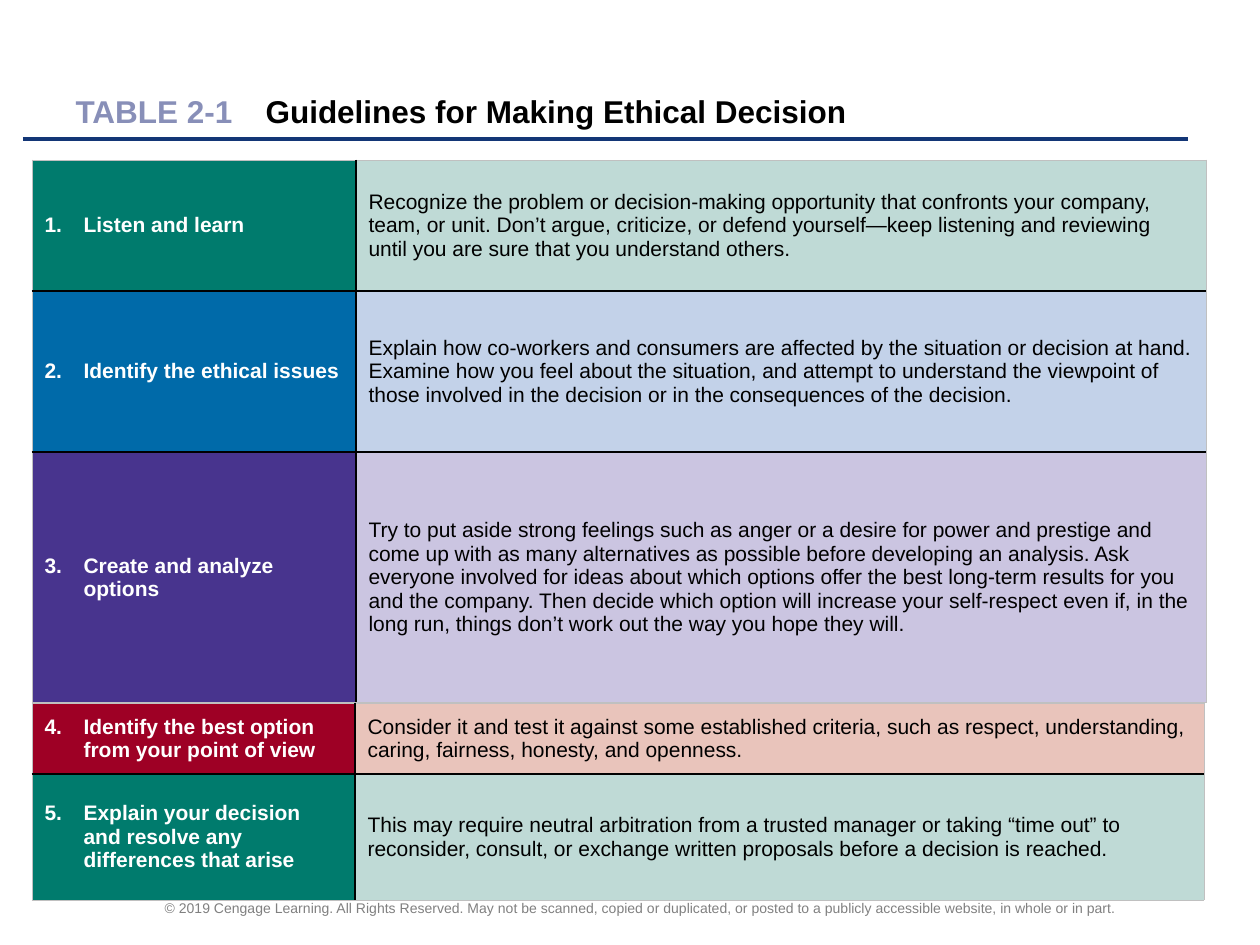
from pptx import Presentation
from pptx.dml.color import RGBColor
from pptx.enum.shapes import MSO_CONNECTOR
from pptx.enum.text import MSO_ANCHOR, PP_ALIGN
from pptx.oxml.ns import qn
from pptx.util import Emu, Pt
from lxml.etree import SubElement

EMU_PER_PX = 914400 / 126

BLACK = RGBColor(0x00, 0x00, 0x00)
WHITE = RGBColor(0xFF, 0xFF, 0xFF)
GRAY = RGBColor(0x80, 0x80, 0x80)
EDGE_GRAY = RGBColor(0xC0, 0xC0, 0xC0)
NAVY = RGBColor(0x13, 0x36, 0x76)
LAVENDER = RGBColor(0x88, 0x8F, 0xB8)
GREEN, PALE_GREEN = RGBColor(0x00, 0x7B, 0x6D), RGBColor(0xBF, 0xDA, 0xD6)
BLUE, PALE_BLUE = RGBColor(0x00, 0x6A, 0xA9), RGBColor(0xC3, 0xD2, 0xE9)
PURPLE, PALE_PURPLE = RGBColor(0x48, 0x34, 0x8E), RGBColor(0xCB, 0xC5, 0xE1)
RED, PALE_RED = RGBColor(0x9E, 0x00, 0x25), RGBColor(0xE9, 0xC4, 0xBB)

# Each row: height, step, step fill, explanation, explanation fill
FIRST_STEPS = [
    (131, "Listen and learn", GREEN,
     "Recognize the problem or decision-making opportunity that confronts your "
     "company, team, or unit. Don’t argue, criticize, or defend yourself—keep "
     "listening and reviewing until you are sure that you understand others.",
     PALE_GREEN),
    (161, "Identify the ethical issues", BLUE,
     "Explain how co-workers and consumers are affected by the situation or "
     "decision at hand. Examine how you feel about the situation, and attempt to "
     "understand the viewpoint of those involved in the decision or in the "
     "consequences of the decision.",
     PALE_BLUE),
    (251, "Create and analyze options", PURPLE,
     "Try to put aside strong feelings such as anger or a desire for power and "
     "prestige and come up with as many alternatives as possible before developing "
     "an analysis. Ask everyone involved for ideas about which options offer the "
     "best long-term results for you and the company. Then decide which option "
     "will increase your self-respect even if, in the long run, things don’t work "
     "out the way you hope they will.",
     PALE_PURPLE),
]
LAST_STEPS = [
    (71, "Identify the best option from your point of view", RED,
     "Consider it and test it against some established criteria, such as respect, "
     "understanding, caring, fairness, honesty, and openness.",
     PALE_RED),
    (126, "Explain your decision and resolve any differences that arise", GREEN,
     "This may require neutral arbitration from a trusted manager or taking “time "
     "out” to reconsider, consult, or exchange written proposals before a decision "
     "is reached.",
     PALE_GREEN),
]


def px(length):
    return Emu(round(length * EMU_PER_PX))


class SlideBuilder:
    font_name = "Arial"

    def __init__(self, slide):
        self.slide = slide

    def add_text(self, paragraph, text, color, size, bold=False):
        run = paragraph.add_run()
        run.text = text
        values = {"name": self.font_name, "size": Pt(size), "bold": bold}
        for name, value in values.items():
            setattr(run.font, name, value)
        run.font.color.rgb = color

    def title(self, left, top, width, height, parts, tab):
        shape = self.slide.shapes.title
        box = {"left": left, "top": top, "width": width, "height": height}
        for name, value in box.items():
            setattr(shape, name, px(value))
        frame = shape.text_frame
        frame.word_wrap = True
        frame.vertical_anchor = MSO_ANCHOR.MIDDLE
        paragraph = frame.paragraphs[0]
        paragraph.alignment = PP_ALIGN.LEFT
        tabs = SubElement(paragraph._p.get_or_add_pPr(), qn("a:tabLst"))
        SubElement(tabs, qn("a:tab"), pos=str(px(tab)), algn="l")
        for text, color in parts:
            self.add_text(paragraph, text, color, 18, bold=True)

    def footer(self, left, top, width, height, text):
        shape = self.slide.shapes.add_textbox(*map(px, (left, top, width, height)))
        frame = shape.text_frame
        frame.word_wrap = True
        frame.vertical_anchor = MSO_ANCHOR.MIDDLE
        paragraph = frame.paragraphs[0]
        paragraph.alignment = PP_ALIGN.CENTER
        self.add_text(paragraph, text, GRAY, 8)

    def rule(self, left, right, y):
        line = self.slide.shapes.add_connector(
            MSO_CONNECTOR.STRAIGHT, *map(px, (left, y, right, y)))
        line.line.color.rgb = NAVY
        line.line.width = Pt(2.25)
        SubElement(line._element.spPr, qn("a:effectLst"))

    def borders(self, cell, inner_sides):
        properties = cell._tc.get_or_add_tcPr()
        for side in "LRTB":
            inner = side in inner_sides
            line = SubElement(properties, qn(f"a:ln{side}"),
                              w=str(Pt(1 if inner else 0.5)))
            fill = SubElement(line, qn("a:solidFill"))
            SubElement(fill, qn("a:srgbClr"), val=str(BLACK if inner else EDGE_GRAY))

    def number(self, paragraph, start):
        properties = paragraph._p.get_or_add_pPr()
        properties.set("marL", str(px(39)))
        properties.set("indent", str(px(-39)))
        SubElement(properties, qn("a:buFont"), typeface="+mj-lt")
        SubElement(properties, qn("a:buAutoNum"), type="arabicPeriod",
                   startAt=str(start))

    def cell(self, cell, text, fill, color, inner_sides, step=None):
        self.borders(cell, inner_sides)
        cell.fill.solid()
        cell.fill.fore_color.rgb = fill
        cell.vertical_anchor = MSO_ANCHOR.MIDDLE
        paragraph = cell.text_frame.paragraphs[0]
        if step:
            self.number(paragraph, step)
        self.add_text(paragraph, text, color, 12, bold=bool(step))

    def steps_table(self, left, top, columns, steps, first_step):
        height = sum(step[0] for step in steps)
        table = self.slide.shapes.add_table(
            len(steps), 2, *map(px, (left, top, sum(columns), height))).table
        table.first_row = table.horz_banding = False
        for column, width in zip(table.columns, columns):
            column.width = px(width)
        for index, (height, step, fill, explanation, pale) in enumerate(steps):
            table.rows[index].height = px(height)
            inner = ("T" if index else "") + ("B" if index < len(steps) - 1 else "")
            self.cell(table.cell(index, 0), step, fill, WHITE, inner + "R",
                      first_step + index)
            self.cell(table.cell(index, 1), explanation, pale, BLACK, inner + "L")


def main():
    presentation = Presentation()
    presentation.slide_width, presentation.slide_height = px(1260), px(945)
    slide = presentation.slides.add_slide(presentation.slide_layouts[5])
    builder = SlideBuilder(slide)

    # Footer, rule and title
    builder.footer(95, 892, 1092, 32,
                   "© 2019 Cengage Learning. All Rights Reserved. May not be scanned, "
                   "copied or duplicated, or posted to a publicly accessible website, "
                   "in whole or in part.")
    builder.rule(23, 1188, 139)
    builder.title(63, 63, 1134, 95,
                  [("TABLE 2-1", LAVENDER),
                   ("\tGuidelines for Making Ethical Decision", BLACK)], tab=190)

    # Guidelines, split over two tables
    builder.steps_table(32, 160, (324, 850), FIRST_STEPS, 1)
    builder.steps_table(32, 703, (323, 849), LAST_STEPS, len(FIRST_STEPS) + 1)

    presentation.save("out.pptx")


if __name__ == "__main__":
    main()
